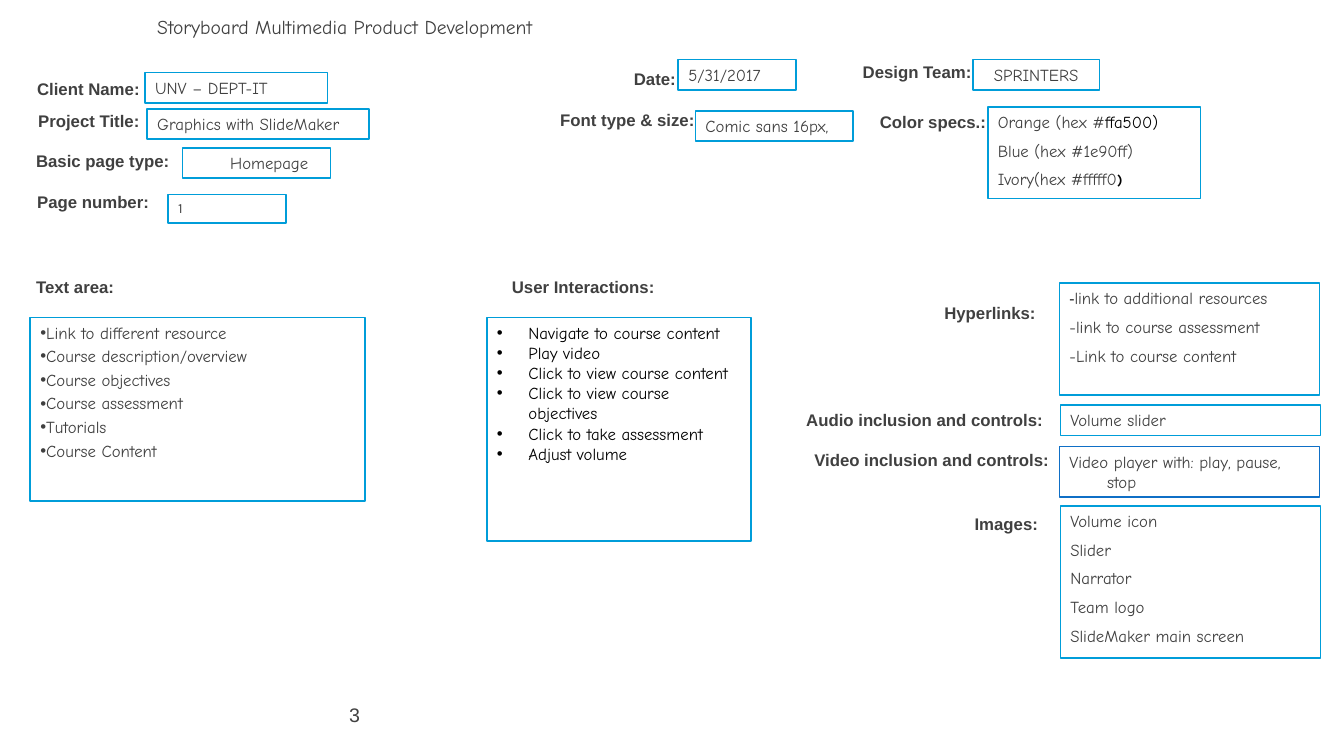
from dataclasses import dataclass, replace

from pptx import Presentation
from pptx.dml.color import RGBColor as Rgb
from pptx.enum.shapes import MSO_SHAPE as Kind
from pptx.enum.text import MSO_ANCHOR as Anchor, MSO_AUTO_SIZE as Fit, PP_ALIGN as Align
from pptx.shapes.autoshape import Shape
from pptx.text.text import Font
from pptx.util import Emu, Pt

COLS, ROWS, CELL = 160, 90, 76200


@dataclass(frozen=True)
class Style:
    face: str
    size: float
    color: str
    bold: bool = False


@dataclass(frozen=True)
class Theme:
    paper: str = "FFFFFF"
    edge: str = "009DD9"
    deep: str = "0F6FC6"
    width: float = 1.25
    label: Style = Style("Arial", 12, "404040", True)
    value: Style = Style("Comic Neue", 12, "404040")
    title: Style = Style("Comic Neue", 14, "404040")
    page: Style = Style("Arial", 14, "404040")
    small: Style = Style("Karla", 10, "404040")
    dash: Style = Style("Karla", 10, "404040", True)
    black: Style = Style("Comic Neue", 12, "000000")
    mark: Style = Style("Karla", 10, "000000", True)


THEME = Theme()


@dataclass(frozen=True)
class Run:
    text: str
    style: Style


Line = str | tuple[Run, ...]


@dataclass(frozen=True)
class Area:
    col: float
    row: float
    cols: float
    rows: float = 3.6


@dataclass(frozen=True)
class Block:
    area: Area
    lines: tuple[Line, ...]
    style: Style = THEME.value
    edge: str = THEME.edge
    gap: float = 6
    left: float = 4.5
    first: float = -4.5
    align: Align = Align.LEFT


def label(text: str, col: float, row: float, cols: float) -> Block:
    return Block(Area(col, row, cols), (text,), THEME.label, "", left=0, first=0)


LABELS = (
    label("Client Name:", 3.24, 8.76, 30),
    label("Project Title:", 3.36, 12.6, 15.72),
    label("Basic page type:", 3.12, 17.4, 18.48),
    label("Page number:", 3.24, 22.2, 16.8),
    label("Date:", 74.28, 7.56, 7.8),
    label("Design Team:", 101.52, 6.72, 16.92),
    label("Font type & size:", 65.52, 12.48, 27.96),
    label("Color specs.:", 103.56, 12.72, 18.96),
    label("Text area:", 3.12, 32.4, 21.6),
    label("User Interactions:", 59.76, 32.4, 19.56),
    label("Hyperlinks:", 111.24, 35.4, 14.04),
    label("Audio inclusion and controls:", 94.8, 48.24, 33),
    label("Video inclusion and controls:", 95.76, 52.92, 31.2),
    label("Images:", 114.84, 60.6, 10.2),
)

FIELDS = (
    Block(Area(17.28, 8.64, 21.72), ("UNV – DEPT-IT",)),
    Block(Area(17.52, 12.96, 26.4), ("Graphics with SlideMaker",)),
    Block(Area(21.72, 17.64, 17.64), ("Homepage",), first=0),
    Block(Area(20.04, 23.16, 14.04, 3.36), ("1",), THEME.small),
    Block(Area(80.76, 7.08, 14.04), ("5/31/2017",)),
    Block(Area(115.8, 7.08, 15.12), ("SPRINTERS",), align=Align.CENTER),
    Block(Area(82.8, 13.2, 18.72), ("Comic sans 16px,",)),
    Block(Area(117.6, 12.72, 25.32, 10.92), (
        (Run("Orange (hex #", THEME.value), Run("ffa500)", THEME.black)),
        "Blue (hex #1e90ff)",
        (Run("Ivory(hex #fffff0", THEME.value), Run(")", THEME.mark)),
    ), left=0, first=0),
    Block(Area(126.12, 33.72, 30.96, 13.32), (
        (Run("-", THEME.dash), Run("link to additional resources", THEME.value)),
        "-link to course assessment",
        "-Link to course content",
    )),
    Block(Area(126.24, 48.24, 30.96), ("Volume slider",)),
    Block(Area(126.12, 53.16, 30.96, 6), ("Video player with: play, pause, stop",),
          edge=THEME.deep),
    Block(Area(126.24, 60.24, 30.96, 18.12), (
        "Volume icon", "Slider", "Narrator", "Team logo", "SlideMaker main screen",
    )),
)

TITLE = Block(Area(17.52, 1.2, 111, 4), ("Storyboard Multimedia Product Development",),
              THEME.title, "", left=0, first=0)
TOPICS = Block(Area(3.6, 37.8, 39.84, 21.84), (
    "Link to different resource", "Course description/overview", "Course objectives",
    "Course assessment", "Tutorials", "Course Content",
), gap=2.4, left=0, first=0)
ACTIONS = Block(Area(57.96, 37.8, 31.44, 26.64), (
    "Navigate to course content", "Play video", "Click to view course content",
    "Click to view course objectives", "Click to take assessment", "Adjust volume",
), THEME.black, gap=0, left=3.75, first=-3.75)
PAGE = replace(label("3", 26.04, 83.04, 18), style=THEME.page, align=Align.RIGHT)


def span(cells: float) -> Emu:
    return Emu(round(cells * CELL))


def paint(font: Font, style: Style) -> None:
    font.name, font.size, font.bold = style.face, Pt(style.size), style.bold
    font.color.rgb = Rgb.from_string(style.color)


def fill(shape: Shape, block: Block) -> None:
    area = block.area
    shape.left, shape.top = span(area.col), span(area.row)
    shape.width, shape.height = span(area.cols), span(area.rows)
    if block.edge:
        shape.fill.solid()
        shape.fill.fore_color.rgb = Rgb.from_string(THEME.paper)
        shape.line.color.rgb = Rgb.from_string(block.edge)
        shape.line.width = Pt(THEME.width)
    frame = shape.text_frame
    frame.word_wrap, frame.auto_size = True, Fit.NONE
    frame.vertical_anchor = Anchor.TOP
    for rank, line in enumerate(block.lines):
        par = frame.add_paragraph() if rank else frame.paragraphs[0]
        par.alignment = block.align
        par.space_before = Pt(block.gap if rank else 0)
        props = par._p.get_or_add_pPr()
        props.set("marL", str(span(block.left)))
        props.set("indent", str(span(block.first)))
        if isinstance(line, str):
            par.text = line
            paint(par.font, block.style)
            continue
        for part in line:
            run = par.add_run()
            run.text = part.text
            paint(run.font, part.style)


def main() -> None:
    deck = Presentation()
    deck.slide_width, deck.slide_height = span(COLS), span(ROWS)
    slide = deck.slides.add_slide(deck.slide_layouts[3])
    for holder, block in zip(slide.placeholders, (TITLE, TOPICS, ACTIONS)):
        fill(holder, block)
    for block in (*LABELS, PAGE):
        fill(slide.shapes.add_textbox(0, 0, 0, 0), block)
    for block in FIELDS:
        shape = slide.shapes.add_shape(Kind.RECTANGLE, 0, 0, 0, 0)
        shape.shadow.inherit = False
        fill(shape, block)
    deck.save("out.pptx")


if __name__ == "__main__":
    main()
